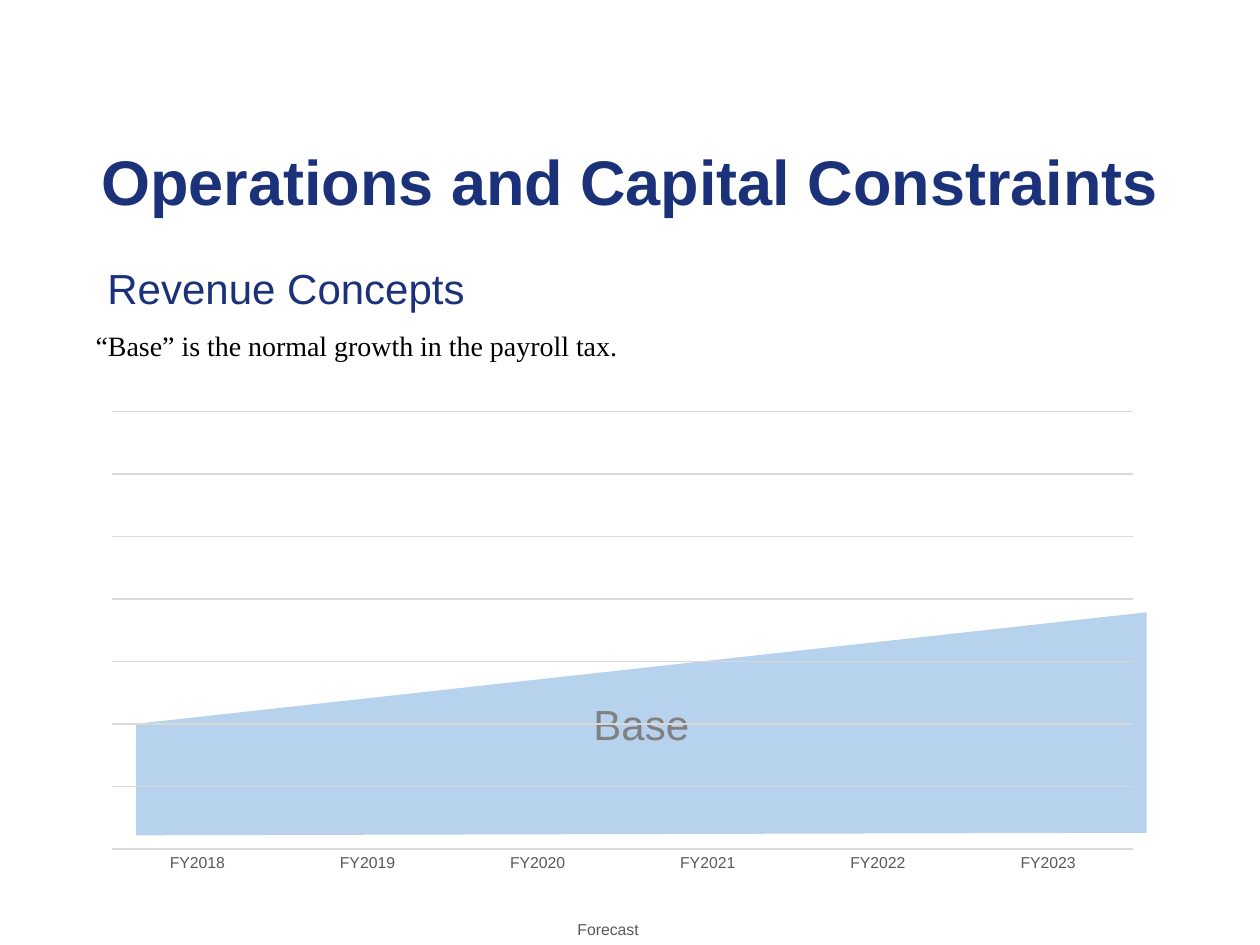
from collections import namedtuple

from lxml.etree import SubElement
from pptx import Presentation
from pptx.chart.data import CategoryChartData
from pptx.dml.color import RGBColor
from pptx.enum.chart import XL_CHART_TYPE as ChartType
from pptx.enum.chart import XL_LEGEND_POSITION as LegendPosition
from pptx.enum.chart import XL_TICK_MARK as TickMark
from pptx.enum.shapes import MSO_SHAPE as Preset
from pptx.enum.text import MSO_ANCHOR as Anchor
from pptx.enum.text import PP_ALIGN as Align
from pptx.oxml import parse_xml
from pptx.oxml.ns import nsdecls, qn
from pptx.util import Inches, Pt

NAVY = RGBColor(0x1B, 0x32, 0x7A)
SKY = RGBColor(0xB6, 0xD2, 0xEC)
GRAY = RGBColor(0x80, 0x80, 0x80)
DARK_GRAY = RGBColor(0x59, 0x59, 0x59)
RULE_GRAY = RGBColor(0xD9, 0xD9, 0xD9)
BLACK = RGBColor(0, 0, 0)
WHITE = RGBColor(0xFF, 0xFF, 0xFF)

CELL = Inches(0.1)
COLUMNS, ROWS = 100, 75
Box = namedtuple("Box", "left top width height")


def grid(*cells):
    """Turn columns and rows into lengths."""
    return [round(cell * CELL) for cell in cells]


def write(shape, text, size, color, font="Arial", align=Align.CENTER, bold=False):
    """Write one styled paragraph into a shape."""
    para = shape.text_frame.paragraphs[0]
    para.text = text
    para.alignment = align
    para.font.name = font
    para.font.size = Pt(size)
    para.font.bold = bold
    para.font.color.rgb = color


def add_heading(page, box, text, size, bold=False):
    """Add a centred navy heading."""
    heading = page.shapes.add_textbox(*grid(*box))
    heading.text_frame.word_wrap = False
    heading.text_frame.vertical_anchor = Anchor.MIDDLE
    write(heading, text, size, NAVY, bold=bold)


def add_note(page, box, text):
    """Add the white explanatory note."""
    note = page.shapes.add_shape(Preset.RECTANGLE, *grid(*box))
    note.shadow.inherit = False
    note.fill.solid()
    note.fill.fore_color.rgb = WHITE
    note.line.fill.background()
    note.text_frame.word_wrap = False
    note.text_frame.vertical_anchor = Anchor.TOP
    write(note, text, 16, BLACK, "Times New Roman", Align.LEFT)


def add_base_band(page, box):
    """Add the rising band of base revenue."""
    right, bottom = box.left + box.width, box.top + box.height
    builder = page.shapes.build_freeform(*grid(box.left, box.top + box.height / 2), scale=1.0)
    corners = [(right, box.top), (right, bottom - 0.2), (box.left, bottom)]
    builder.add_line_segments([grid(*corner) for corner in corners], close=True)
    band = builder.convert_to_shape()
    band.shadow.inherit = False
    band.fill.solid()
    band.fill.fore_color.rgb = SKY
    band.line.fill.background()
    band.text_frame.vertical_anchor = Anchor.MIDDLE
    write(band, "Base", 24, GRAY)


def style_font(font, size, color):
    """Set the typeface, size and colour of chart text."""
    font.name = "Arial"
    font.size = Pt(size)
    font.color.rgb = color


def style_line(line):
    """Make an axis or grid line thin and pale."""
    line.color.rgb = RULE_GRAY
    line.width = Pt(0.75)


def set_plot_layout(chart, shares):
    """Fix the inner plot area and clear the chart backgrounds."""
    root = chart.element.find(qn("c:chart"))
    plot_area = root.find(qn("c:plotArea"))
    for old in plot_area.findall(qn("c:layout")):
        plot_area.remove(old)
    layout = parse_xml(f"<c:layout {nsdecls('c')}/>")
    manual = SubElement(layout, qn("c:manualLayout"))
    settings = [("layoutTarget", "inner"), ("xMode", "edge"), ("yMode", "edge")]
    for tag, value in settings + list(zip("xywh", shares)):
        SubElement(manual, qn(f"c:{tag}")).set("val", str(value))
    plot_area.insert(0, layout)
    clear = f"<c:spPr {nsdecls('c', 'a')}><a:noFill/><a:ln><a:noFill/></a:ln></c:spPr>"
    plot_area.append(parse_xml(clear))
    root.addnext(parse_xml(clear))


def add_forecast_chart(page, box):
    """Add the forecast chart with unfilled columns."""
    data = CategoryChartData()
    data.categories = [f"FY{year}" for year in range(2018, 2024)]
    data.add_series("Forecast", [80, 81, 92, 89, 99, 100])
    chart = page.shapes.add_chart(ChartType.COLUMN_STACKED, *grid(*box), data).chart
    chart.has_title = False
    style_font(chart.font, 10, BLACK)

    plot = chart.plots[0]
    plot.vary_by_categories = False
    plot.gap_width, plot.overlap = 200, 100
    plot.series[0].format.fill.background()
    plot.series[0].format.line.fill.background()

    years = chart.category_axis
    years.major_tick_mark = years.minor_tick_mark = TickMark.NONE
    style_font(years.tick_labels.font, 9, DARK_GRAY)
    style_line(years.format.line)

    amounts = chart.value_axis
    amounts.minimum_scale, amounts.maximum_scale = 57, 137
    amounts.major_unit = 11.42
    amounts.has_major_gridlines = True
    style_line(amounts.major_gridlines.format.line)
    amounts.visible = False

    chart.has_legend = True
    chart.legend.position = LegendPosition.BOTTOM
    chart.legend.include_in_layout = False
    style_font(chart.legend.font, 9, DARK_GRAY)
    set_plot_layout(chart, (0.05, 0.11, 0.94, 0.73))


def main():
    """Build and save the slide."""
    deck = Presentation()
    deck.slide_width, deck.slide_height = grid(COLUMNS, ROWS)
    page = deck.slides.add_slide(deck.slide_layouts[6])
    add_base_band(page, Box(10.8, 48.6, 80.2, 17.7))
    add_heading(page, Box(7.5, 18.7, 30.4, 8.3), "Revenue Concepts", 24)
    add_forecast_chart(page, Box(4.6, 27.4, 86.2, 47.6))
    add_note(page, Box(6.6, 25.6, 46.9, 3.7), "“Base” is the normal growth in the payroll tax.")
    add_heading(page, Box(0, 10.2, COLUMNS, 8.3), "Operations and Capital Constraints", 36, bold=True)
    deck.save("out.pptx")


if __name__ == "__main__":
    main()
